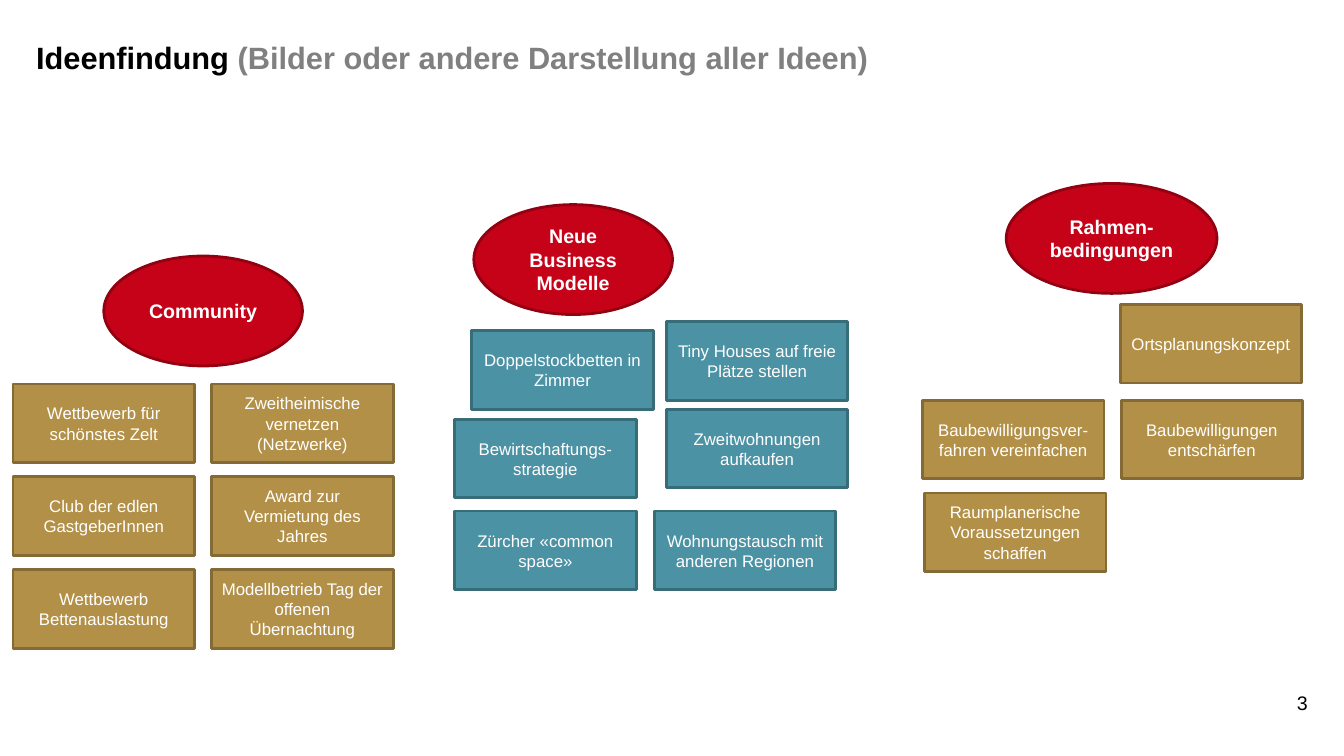
"""Build the slide that sorts all ideas under three themes."""
import pptx
import pptx.util
import pptx.dml.color
import pptx.enum.shapes
import pptx.enum.text

Inches = pptx.util.Inches
KIND = pptx.enum.shapes.MSO_SHAPE
ALIGN = pptx.enum.text.PP_ALIGN
ANCHOR = pptx.enum.text.MSO_ANCHOR

HUES = {
    "black": "000000", "grey": "808080", "white": "FFFFFF",
    "red": "C60219", "wine": "920112",
    "gold": "B39048", "brown": "846B35",
    "teal": "4B92A4", "petrol": "376C79",
}
TITLE = [("Ideenfindung ", "black"),
         ("(Bilder oder andere Darstellung aller Ideen)", "grey")]
PAGE = [("3", "black")]
CARD = (1.8, 0.78)
GRID = {"left": 0.13, "top": 3.81, "across": 1.97, "down": 0.92}
CLUB = [
    ("Wettbewerb für schönstes Zelt", "Zweitheimische vernetzen (Netzwerke)"),
    ("Club der edlen GastgeberInnen", "Award zur Vermietung des Jahres"),
    ("Wettbewerb Bettenauslastung",
     "Modellbetrieb Tag der offenen Übernachtung"),
]
MODELS = [
    ("Doppelstockbetten in Zimmer", 4.68, 3.28),
    ("Tiny Houses auf freie Plätze stellen", 6.61, 3.19),
    ("Bewirtschaftungs-strategie", 4.51, 4.16),
    ("Zweitwohnungen aufkaufen", 6.61, 4.06),
    ("Zürcher «common space»", 4.51, 5.07),
    ("Wohnungstausch mit anderen Regionen", 6.49, 5.07),
]
RULES = [
    ("Ortsplanungskonzept", 11.11, 3.02),
    ("Baubewilligungsver-fahren vereinfachen", 9.15, 3.97),
    ("Baubewilligungen entschärfen", 11.12, 3.97),
    ("Raumplanerische Voraussetzungen schaffen", 9.17, 4.89),
]
CELLS = [
    (text, GRID["left"] + col * GRID["across"],
     GRID["top"] + row * GRID["down"])
    for row, pair in enumerate(CLUB) for col, text in enumerate(pair)
]
THEMES = [
    ("Community", (1.03, 2.54, 1.97, 1.09), CELLS, "gold", "brown"),
    ("Neue Business Modelle", (4.7, 2.03, 1.97, 1.09), MODELS,
     "teal", "petrol"),
    ("Rahmen-bedingungen", (9.98, 1.82, 2.09, 1.09), RULES, "gold", "brown"),
]
HEAD = {"name": "Arial", "size": pptx.util.Pt(22), "bold": True}
FOOT = {"name": "Arial", "size": pptx.util.Pt(14), "bold": False}
THEME = {"name": "Arial", "size": pptx.util.Pt(14), "bold": True}
IDEA = {"name": "Arial", "size": pptx.util.Pt(12), "bold": False}


def tint(name):
    return pptx.dml.color.RGBColor.from_string(HUES[name])


def write(shape, parts, style, align, anchor):
    frame = shape.text_frame
    frame.word_wrap = True
    frame.vertical_anchor = anchor
    line = frame.paragraphs[0]
    line.alignment = align
    for text, hue in parts:
        run = line.add_run()
        run.text = text
        run.font.color.rgb = tint(hue)
        for key, value in style.items():
            setattr(run.font, key, value)


def label(slide, box, *text):
    write(slide.shapes.add_textbox(*map(Inches, box)), *text)


def node(slide, kind, box, text, fill, edge, style):
    shape = slide.shapes.add_shape(kind, *map(Inches, box))
    shape.shadow.inherit = False
    shape.fill.solid()
    shape.fill.fore_color.rgb = tint(fill)
    shape.line.color.rgb = tint(edge)
    shape.line.width = pptx.util.Pt(2)
    write(shape, [(text, "white")], style, ALIGN.CENTER, ANCHOR.MIDDLE)


def main():
    deck = pptx.Presentation()
    deck.slide_width, deck.slide_height = Inches(13.33), Inches(7.5)
    slide = deck.slides.add_slide(deck.slide_layouts[6])
    label(slide, (0.26, 0.35, 12.71, 0.43), TITLE, HEAD,
          ALIGN.LEFT, ANCHOR.MIDDLE)
    label(slide, (9.96, 6.81, 3.11, 0.52), PAGE, FOOT,
          ALIGN.RIGHT, ANCHOR.TOP)
    for name, oval, ideas, fill, edge in THEMES:
        node(slide, KIND.OVAL, oval, name, "red", "wine", THEME)
        for text, left, top in ideas:
            node(slide, KIND.RECTANGLE, (left, top, *CARD), text,
                 fill, edge, IDEA)
    deck.save("out.pptx")


if __name__ == "__main__":
    main()
